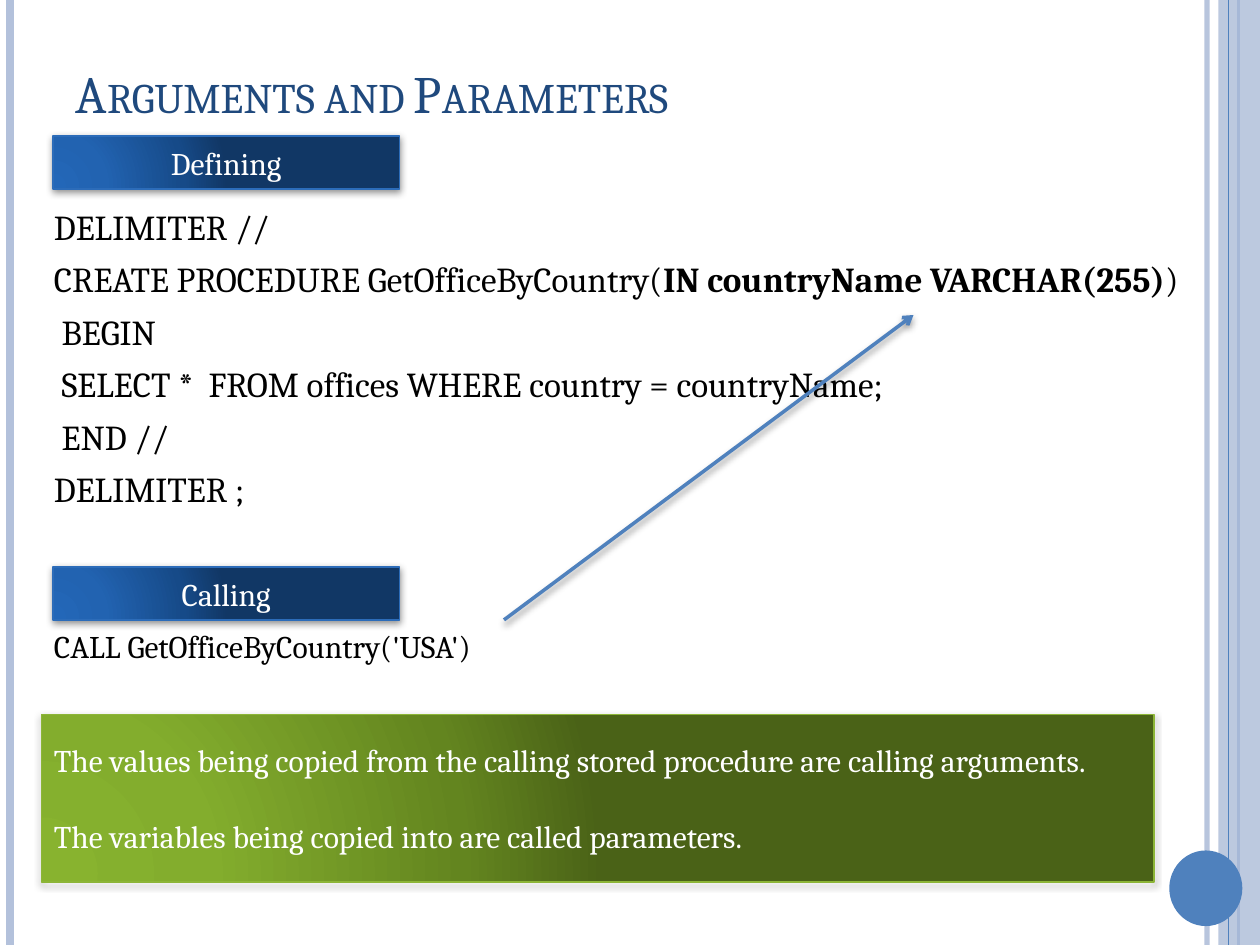
import pptx
import pptx.dml.color
import pptx.enum.shapes
import pptx.enum.text
import pptx.oxml
import pptx.oxml.ns
import pptx.util

Inches, Pt = pptx.util.Inches, pptx.util.Pt
SHAPE = pptx.enum.shapes.MSO_SHAPE
ALIGN = pptx.enum.text.PP_ALIGN
ANCHOR = pptx.enum.text.MSO_ANCHOR
NS = pptx.oxml.ns.nsdecls("a")

COLORS = {
    "title": "1F497D", "code": "000000", "label": "FFFFFF",
    "accent": "4F81BD", "band": "B3C1DB",
    "blue_edge": "2C6CB9", "green_edge": "8CB537",
}
STOPS = (0, 30, 75, 100)
GRADIENTS = {
    "blue": ("2367B8", "2263B1", "164A88", "113765"),
    "green": ("88B32F", "83AD2D", "63851F", "4A6217"),
}


def rgb(name):
    return pptx.dml.color.RGBColor.from_string(COLORS[name])


class SlideBuilder:
    font = "Cambria"

    def __init__(self, prs):
        self.slide = prs.slides.add_slide(prs.slide_layouts[5])
        self.shapes = self.slide.shapes

    def style(self, paragraph, size, color):
        for run in paragraph.runs:
            run.font.name = self.font
            run.font.size = Pt(size)
            run.font.color.rgb = rgb(color)

    def set_alpha(self, fill_parent, percent):
        color = fill_parent.find(".//" + pptx.oxml.ns.qn("a:srgbClr"))
        color.append(pptx.oxml.parse_xml(f'<a:alpha {NS} val="{percent * 1000}"/>'))

    def add_shadow(self, shape, alpha, distance):
        effects = shape._element.spPr.find(pptx.oxml.ns.qn("a:effectLst"))
        effects.append(pptx.oxml.parse_xml(
            f'<a:outerShdw {NS} blurRad="{Pt(4)}" dist="{Pt(distance)}" dir="5400000" rotWithShape="0">'
            f'<a:srgbClr val="000000"><a:alpha val="{alpha * 1000}"/></a:srgbClr></a:outerShdw>'))

    def title(self, text, left, top, width, height):
        title = self.shapes.title
        title.left, title.top = Inches(left), Inches(top)
        title.width, title.height = Inches(width), Inches(height)
        frame = title.text_frame
        frame.text = text
        frame.auto_size = pptx.enum.text.MSO_AUTO_SIZE.NONE
        frame.vertical_anchor = ANCHOR.MIDDLE
        paragraph = frame.paragraphs[0]
        paragraph.alignment = ALIGN.LEFT
        self.style(paragraph, 30, "title")
        paragraph.runs[0].font._element.set("cap", "small")

    def line(self, start, end, color, width):
        line = self.shapes.add_connector(
            pptx.enum.shapes.MSO_CONNECTOR.STRAIGHT, *map(Inches, start + end))
        line.line.color.rgb = rgb(color)
        line.line.width = Pt(width)
        line._element.spPr.append(pptx.oxml.parse_xml(f"<a:effectLst {NS}/>"))
        return line

    def arrow(self, start, end):
        arrow = self.line(start, end, "accent", 2)
        arrow.line._get_or_add_ln().append(
            pptx.oxml.parse_xml(f'<a:tailEnd {NS} type="arrow"/>'))
        self.add_shadow(arrow, 40, 2)

    def plain_shape(self, kind, left, top, width, height, color):
        shape = self.shapes.add_shape(kind, *map(Inches, (left, top, width, height)))
        shape.shadow.inherit = False
        shape.fill.solid()
        shape.fill.fore_color.rgb = rgb(color)
        shape.line.fill.background()
        return shape

    def gradient_box(self, lines, left, top, width, height, hue, align, gap=0):
        box = self.plain_shape(SHAPE.RECTANGLE, left, top, width, height, hue + "_edge")
        box.line.color.rgb = rgb(hue + "_edge")
        box.line.width = Pt(1)
        stops = "".join(f'<a:gs pos="{pos * 1000}"><a:srgbClr val="{color}"/></a:gs>'
                        for pos, color in zip(STOPS, GRADIENTS[hue]))
        properties = box._element.spPr
        properties.replace(
            properties.find(pptx.oxml.ns.qn("a:solidFill")),
            pptx.oxml.parse_xml(
                f'<a:gradFill {NS} rotWithShape="1"><a:gsLst>{stops}</a:gsLst><a:path path="circle">'
                '<a:fillToRect l="5000" t="100000" r="120000" b="10000"/></a:path></a:gradFill>'))
        self.add_shadow(box, 42, 1.6)
        frame = box.text_frame
        frame.text = "\n".join(lines)
        frame.vertical_anchor = ANCHOR.MIDDLE
        for index, paragraph in enumerate(frame.paragraphs):
            paragraph.alignment = align
            paragraph.space_before = Pt(gap if index else 0)
            self.style(paragraph, 18, "label")

    def code(self, lines, left, top, width, height, size, bold="", gap=0, wrap=True):
        frame = self.shapes.add_textbox(*map(Inches, (left, top, width, height))).text_frame
        frame.word_wrap = wrap
        frame.text = "\n".join(lines)
        for paragraph in frame.paragraphs:
            paragraph.space_before = Pt(gap)
            if bold and bold in paragraph.text:
                before, after = paragraph.text.split(bold)
                paragraph.text = before
                for part in (bold, after):
                    run = paragraph.add_run()
                    run.text = part
                    run.font.bold = part == bold
            self.style(paragraph, size, "code")


def main():
    prs = pptx.Presentation()
    prs.slide_width, prs.slide_height = Inches(10), Inches(7.5)
    page = SlideBuilder(prs)

    # Side decoration
    def rule(x, color, width):
        return page.line((x, 0), (x, 7.5), color, width)

    inner_rule = rule(9.58, "band", 3)
    page.set_alpha(inner_rule.line._get_or_add_ln(), 93)
    rule(0.08, "band", 4.5)
    rule(9.83, "accent", 1.5)
    side_band = page.plain_shape(SHAPE.RECTANGLE, 9.67, 0, 0.33, 7.5, "band")
    page.set_alpha(side_band._element.spPr, 87)
    rule(9.75, "accent", 0.75)
    page.plain_shape(SHAPE.OVAL, 9.28, 6.75, 0.58, 0.6, "accent")

    # Title and procedure definition
    page.title("Arguments and Parameters", 0.5, 0.3, 8.67, 0.87)
    parameter = "IN countryName VARCHAR(255)"
    page.code(["DELIMITER //",
               f"CREATE PROCEDURE GetOfficeByCountry({parameter})",
               " BEGIN",
               " SELECT *  FROM offices WHERE country = countryName;",
               " END //",
               "DELIMITER ;"],
              0.33, 1.58, 10.67, 2.17, 20, bold=parameter, gap=6)

    # Section labels
    for label, top in (("Defining", 1.08), ("Calling", 4.5)):
        page.gradient_box([label], 0.42, top, 2.75, 0.42, "blue", ALIGN.CENTER)

    # Call, with an arrow from argument to parameter
    page.code(["CALL GetOfficeByCountry('USA')"], 0.33, 4.93, 4.18, 0.4, 18, wrap=False)
    page.arrow((4, 4.92), (7.25, 2.5))

    # Explanation
    page.gradient_box(
        ["The values being copied from the calling stored procedure are calling arguments.",
         "The variables being copied into are called parameters."],
        0.33, 5.67, 8.83, 1.33, "green", ALIGN.LEFT, gap=21.6)

    prs.save("out.pptx")


if __name__ == "__main__":
    main()
